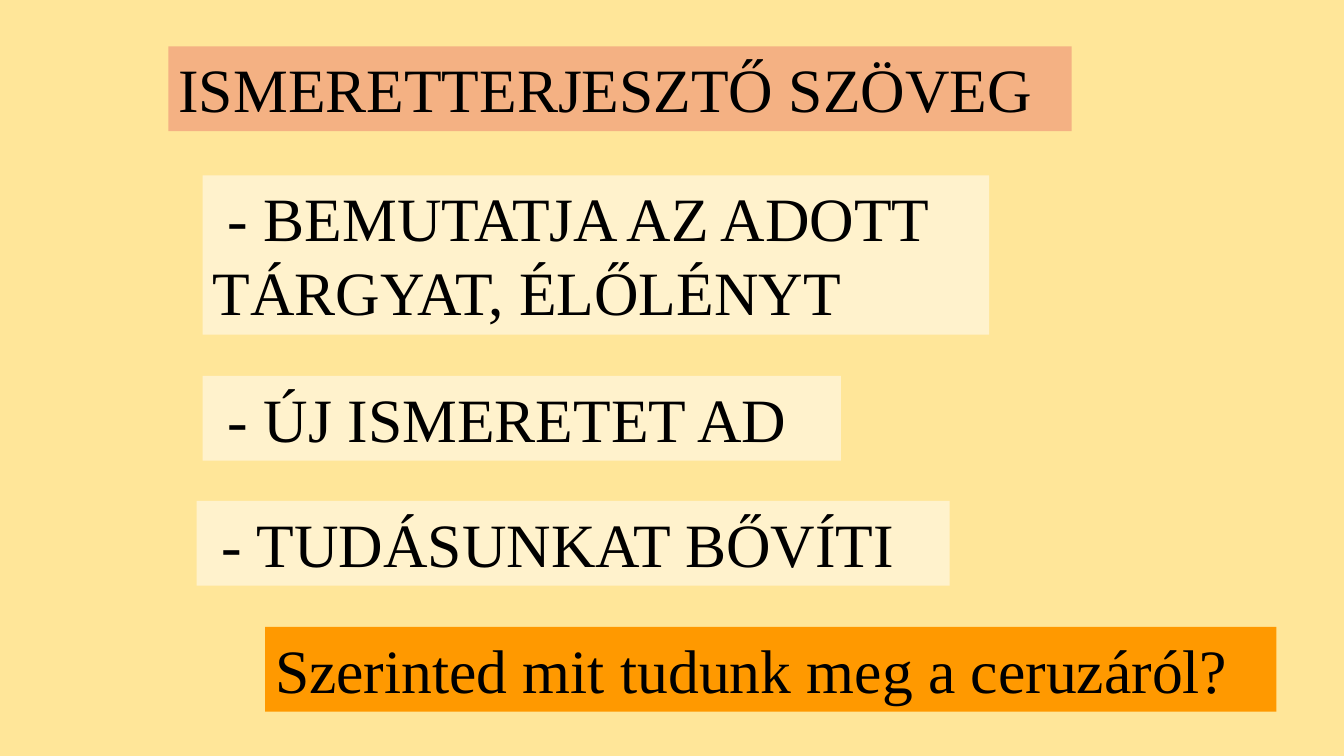
from pptx import Presentation
from pptx.dml.color import RGBColor
from pptx.enum.text import MSO_ANCHOR, MSO_AUTO_SIZE, PP_ALIGN
from pptx.util import Inches, Pt

BACKGROUND = RGBColor(0xFF, 0xE6, 0x99)
SALMON = RGBColor(0xF4, 0xB1, 0x83)
CREAM = RGBColor(0xFF, 0xF2, 0xCC)
ORANGE = RGBColor(0xFF, 0x99, 0x00)
BLACK = RGBColor(0, 0, 0)

FONT = "Times New Roman"
LINE_HEIGHT = 0.74
PADDING = 0.1

# text, left, top, width, number of lines, fill
TITLE = ("ISMERETTERJESZTŐ SZÖVEG", 1.67, 0.46, 8.96, 1, SALMON)
BOXES = [
    (" - BEMUTATJA AZ ADOTT TÁRGYAT, ÉLŐLÉNYT", 2.01, 1.74, 7.8, 2, CREAM),
    (" - ÚJ ISMERETET AD", 2.01, 3.73, 6.33, 1, CREAM),
    (" - TUDÁSUNKAT BŐVÍTI", 1.95, 4.97, 7.47, 1, CREAM),
    ("Szerinted mit tudunk meg a ceruzáról?", 2.63, 6.22, 10.03, 1, ORANGE),
]


def fill_box(sp, text, left, top, width, lines, color):
    sp.left, sp.top, sp.width = Inches(left), Inches(top), Inches(width)
    sp.height = Inches(lines * LINE_HEIGHT + PADDING)
    sp.fill.solid()
    sp.fill.fore_color.rgb = color
    tf = sp.text_frame
    tf.text = text
    tf.word_wrap = True
    tf.auto_size = MSO_AUTO_SIZE.SHAPE_TO_FIT_TEXT
    tf.vertical_anchor = MSO_ANCHOR.TOP
    p = tf.paragraphs[0]
    p.alignment = PP_ALIGN.LEFT
    font = p.runs[0].font
    font.name, font.size = FONT, Pt(44)
    font.color.rgb = BLACK


def main():
    prs = Presentation()
    prs.slide_width, prs.slide_height = Inches(13.33), Inches(7.5)
    s = prs.slides.add_slide(prs.slide_layouts[5])
    s.background.fill.solid()
    s.background.fill.fore_color.rgb = BACKGROUND

    fill_box(s.shapes.title, *TITLE)
    for box in BOXES:
        fill_box(s.shapes.add_textbox(0, 0, 0, 0), *box)
    prs.save("out.pptx")


if __name__ == "__main__":
    main()
